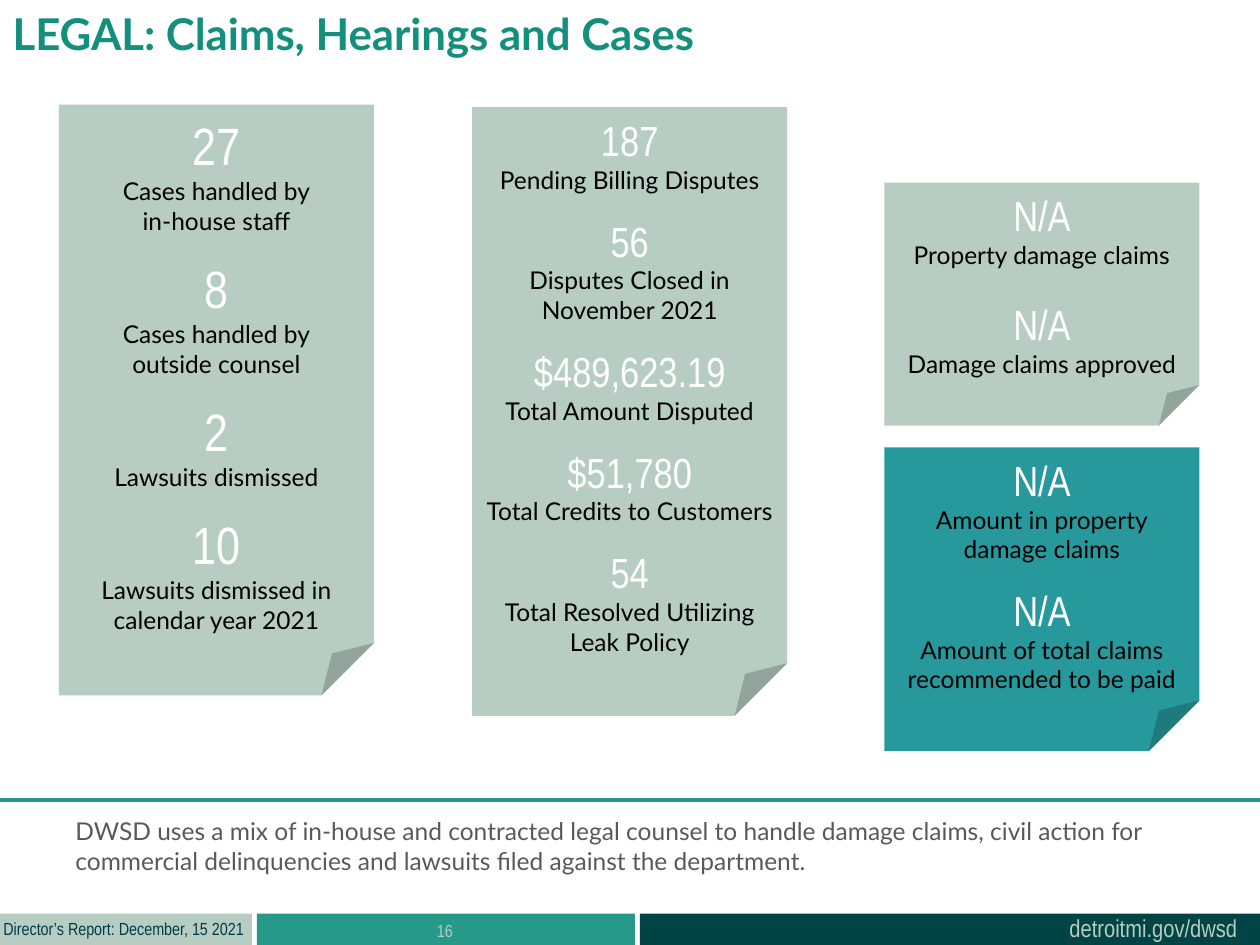
"""Build the legal claims, hearings and cases slide."""
import pptx
import pptx.util
from pptx.dml.color import RGBColor
from pptx.enum.shapes import MSO_CONNECTOR, MSO_SHAPE
from pptx.enum.text import MSO_ANCHOR, MSO_AUTO_SIZE, PP_ALIGN
from pptx.oxml.ns import qn
from pptx.util import Cm, Pt

SAGE = RGBColor(0xB7, 0xCD, 0xC2)
GREEN = RGBColor(0x27, 0x99, 0x89)
TEAL = RGBColor(0x27, 0x99, 0x9D)
DARK = RGBColor(0x00, 0x44, 0x45)
NAVY = RGBColor(0x00, 0x3B, 0x49)
TITLE = RGBColor(0x13, 0x8F, 0x7E)
GRAY = RGBColor(0x59, 0x59, 0x59)
WHITE = RGBColor(0xFF, 0xFF, 0xFF)
BLACK = RGBColor(0x00, 0x00, 0x00)


class Deck:
    HEAD = "Lato"
    NARROW = "Arial Narrow"
    CARD_WIDTH = 6.35

    def __init__(self, width, height):
        self.prs = pptx.Presentation()
        self.prs.slide_width, self.prs.slide_height = Cm(width), Cm(height)
        self.s = self.prs.slides.add_slide(self.prs.slide_layouts[5])

    def add_runs(self, p, text, size, font, color, bold=False, align=PP_ALIGN.LEFT):
        p.alignment = align
        for i, line in enumerate(text.split("\n")):
            if i:
                p.add_line_break()
            r = p.add_run()
            r.text = line
            r.font.size, r.font.name, r.font.bold = Pt(size), font, bold
            r.font.color.rgb = color

    def title(self, text, x, y, w, h):
        sp = self.s.shapes.title
        sp.left, sp.top, sp.width, sp.height = Cm(x), Cm(y), Cm(w), Cm(h)
        tf = sp.text_frame
        tf.auto_size = MSO_AUTO_SIZE.NONE
        tf.vertical_anchor = MSO_ANCHOR.TOP
        self.add_runs(tf.paragraphs[0], text, 25, self.HEAD, TITLE, bold=True)

    def shape(self, kind, x, y, w, h, color):
        sp = self.s.shapes.add_shape(kind, Cm(x), Cm(y), Cm(w), Cm(h))
        sp.shadow.inherit = False
        sp.fill.solid()
        sp.fill.fore_color.rgb = color
        sp.line.fill.background()
        return sp

    def text(self, text, x, y, w, h, size, font, color, align=PP_ALIGN.LEFT, wrap=True):
        tf = self.s.shapes.add_textbox(Cm(x), Cm(y), Cm(w), Cm(h)).text_frame
        tf.word_wrap = wrap
        self.add_runs(tf.paragraphs[0], text, size, font, color, align=align)

    def card(self, x, y, h, color, size, gap, facts):
        sp = self.shape(MSO_SHAPE.FOLDED_CORNER, x, y, self.CARD_WIDTH, h, color)
        tf = sp.text_frame
        tf.word_wrap = True
        tf.vertical_anchor = MSO_ANCHOR.MIDDLE
        for i, (figure, label) in enumerate(facts):
            p = tf.add_paragraph() if i else tf.paragraphs[0]
            if i:
                p.space_before = Pt(gap)
            self.add_runs(p, figure, size, self.NARROW, WHITE, align=PP_ALIGN.CENTER)
            self.add_runs(tf.add_paragraph(), label, 14, self.HEAD, BLACK, align=PP_ALIGN.CENTER)

    def line(self, x1, y1, x2, y2, color, width):
        c = self.s.shapes.add_connector(MSO_CONNECTOR.STRAIGHT, Cm(x1), Cm(y1), Cm(x2), Cm(y2))
        c.line.color.rgb = color
        c.line.width = Pt(width)
        spPr = c._element.spPr
        spPr.append(spPr.makeelement(qn("a:effectLst"), {}))


def main():
    d = Deck(25.4, 19.05)
    for x, w, color in ((5.18, 7.62, GREEN), (12.9, 12.5, DARK), (0, 5.08, SAGE)):
        d.shape(MSO_SHAPE.RECTANGLE, x, 18.42, w, 0.63, color)
    d.text("detroitmi.gov/dwsd", 21.31, 18.29, 3.94, 0.86, 14, d.NARROW, SAGE, wrap=False)
    d.text("Director’s Report: December, 15 2021", -0.18, 18.39, 5.41, 0.69, 10, d.NARROW, NAVY,
           wrap=False)
    d.text("16", 5.16, 18.42, 7.62, 1.02, 10, d.NARROW, SAGE, PP_ALIGN.CENTER)
    d.title("LEGAL: Claims, Hearings and Cases", 0, 0, 19.28, 1.96)

    d.card(17.83, 3.68, 4.9, SAGE, 24, 16.5, [
        ("N/A", "Property damage claims"),
        ("N/A", "Damage claims approved"),
    ])
    d.card(17.83, 9.02, 6.12, TEAL, 24, 12, [
        ("N/A", "Amount in property\ndamage claims"),
        ("N/A", "Amount of total claims recommended to be paid"),
    ])
    d.card(9.52, 2.16, 12.27, SAGE, 24, 12, [
        ("187", "Pending Billing Disputes"),
        ("56", "Disputes Closed in\nNovember 2021"),
        ("$489,623.19", "Total Amount Disputed"),
        ("$51,780", "Total Credits to Customers"),
        ("54", "Total Resolved Utilizing Leak Policy"),
    ])
    d.card(1.19, 2.11, 11.91, SAGE, 30, 12, [
        ("27", "Cases handled by\nin-house staff"),
        ("8", "Cases handled by\noutside counsel"),
        ("2", "Lawsuits dismissed"),
        ("10", "Lawsuits dismissed in calendar year 2021"),
    ])

    d.text("DWSD uses a mix of in-house and contracted legal counsel to handle damage claims, "
           "civil action for commercial delinquencies and lawsuits filed against the department.",
           1.27, 16.33, 22.91, 1.68, 14, d.HEAD, GRAY)
    d.line(25.7, 16.13, 0, 16.13, GREEN, 2.25)
    d.prs.save("out.pptx")


if __name__ == "__main__":
    main()
